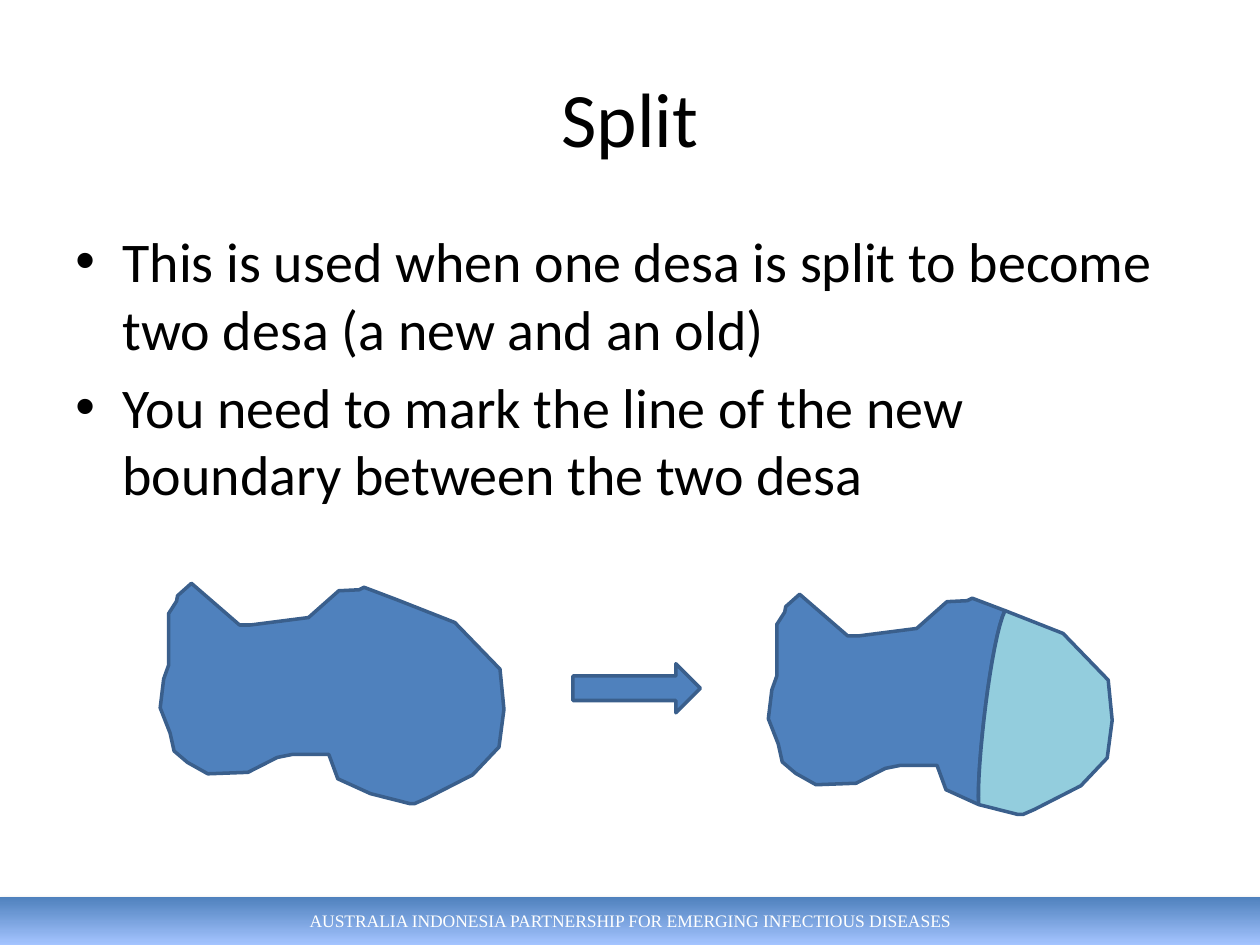
from lxml import etree
from pptx import Presentation
from pptx import util as u
from pptx.dml.color import RGBColor
from pptx.enum import shapes, text
from pptx.oxml import parse_xml
from pptx.oxml.ns import qn

BLACK = RGBColor(0x00, 0x00, 0x00)
WHITE = RGBColor(0xFF, 0xFF, 0xFF)
BLUE = RGBColor(0x4F, 0x81, 0xBD)
PALE_BLUE = RGBColor(0xA4, 0xC4, 0xFF)
OUTLINE = RGBColor(0x3A, 0x5F, 0x8C)
AQUA = RGBColor(0x93, 0xCD, 0xDD)

WEST = [
    (7.47, 16), (6.81, 15.7), (6.63, 15.21), (5.89, 15.21), (5.59, 15.27),
    (5, 15.57), (4.19, 15.6), (3.78, 15.37), (3.51, 15.14), (3.43, 14.78),
    (3.23, 14.27), (3.3, 13.69), (3.4, 13.41), (3.4, 12.37), (3.56, 12.12),
    (3.58, 12.01), (3.86, 11.76), (4.83, 12.6), (5.05, 12.6), (6.22, 12.45),
    (6.83, 11.91), (7.24, 11.89), (7.34, 11.84), (8, 12.09),
]
EAST = [
    (9.17, 12.55), (10.08, 13.49), (10.16, 14.3), (10.06, 15.06),
    (9.53, 15.62), (8.59, 16.1), (8.36, 16.2), (8.26, 16.2),
]
BOUNDARY_CONTROLS = [(7.72, 12.65), (7.42, 15.29)]
AFTER_SPLIT = (12.26, 0.22)

SHADOW = (
    '<a:effectLst xmlns:a="http://schemas.openxmlformats.org/drawingml/2006/main">'
    '<a:outerShdw blurRad="40000" dist="23000" dir="5400000" rotWithShape="0">'
    '<a:srgbClr val="000000"><a:alpha val="35000"/></a:srgbClr>'
    '</a:outerShdw></a:effectLst>'
)


def add_bullet(paragraph, indent):
    properties = paragraph._p.get_or_add_pPr()
    properties.set("marL", str(indent))
    properties.set("indent", str(-indent))
    etree.SubElement(properties, qn("a:buFont")).set("typeface", "Arial")
    etree.SubElement(properties, qn("a:buChar")).set("char", "•")


def write(frame, *lines, size, color, font="Calibri", align=text.PP_ALIGN.LEFT,
          anchor=text.MSO_ANCHOR.TOP, bullet_indent=None, gap=0):
    frame.word_wrap = True
    frame.vertical_anchor = anchor
    for number, line in enumerate(lines):
        paragraph = frame.add_paragraph() if number else frame.paragraphs[0]
        if number:
            paragraph.space_before = u.Pt(gap)
        if bullet_indent:
            add_bullet(paragraph, bullet_indent)
        paragraph.alignment = align
        run = paragraph.add_run()
        run.text = line
        run.font.size = u.Pt(size)
        run.font.name = font
        run.font.color.rgb = color


def add_footer(slide):
    footer = slide.shapes.add_shape(
        shapes.MSO_SHAPE.RECTANGLE, u.Cm(0), u.Cm(18.08), u.Cm(25.4), u.Cm(0.97))
    footer.line.fill.background()
    footer.fill.gradient()
    footer.fill.gradient_angle = 270
    for stop, position, color in zip(footer.fill.gradient_stops, (0, 1), (BLUE, PALE_BLUE)):
        stop.position = position
        stop.color.rgb = color
    footer._element.spPr.append(parse_xml(SHADOW))
    write(footer.text_frame,
          "AUSTRALIA INDONESIA PARTNERSHIP FOR EMERGING INFECTIOUS DISEASES",
          size=10, color=WHITE, font="Times New Roman",
          align=text.PP_ALIGN.CENTER, anchor=text.MSO_ANCHOR.MIDDLE)


def add_textbox(slide, top, height, *lines, **format):
    box = slide.shapes.add_textbox(u.Cm(1.27), u.Cm(top), u.Cm(22.86), u.Cm(height))
    write(box.text_frame, *lines, **format)


def paint(shape, color):
    shape.shadow.inherit = False
    shape.fill.solid()
    shape.fill.fore_color.rgb = color
    shape.line.color.rgb = OUTLINE
    shape.line.width = u.Pt(2)


def curve(start, first, second, end, steps=16):
    points = []
    for step in range(1, steps):
        t = step / steps
        weights = ((1 - t) ** 3, 3 * t * (1 - t) ** 2, 3 * t ** 2 * (1 - t), t ** 3)
        points.append(tuple(
            sum(w * p[axis] for w, p in zip(weights, (start, first, second, end)))
            for axis in (0, 1)))
    return points


def add_desa(slide, outline, color, offset=(0, 0)):
    corners = [(u.Cm(x + offset[0]), u.Cm(y + offset[1])) for x, y in outline]
    builder = slide.shapes.build_freeform(*corners[0])
    builder.add_line_segments(corners[1:], close=True)
    paint(builder.convert_to_shape(), color)


def add_arrow(slide):
    arrow = slide.shapes.add_shape(
        shapes.MSO_SHAPE.RIGHT_ARROW, u.Cm(11.55), u.Cm(13.38), u.Cm(2.57), u.Cm(0.99))
    paint(arrow, BLUE)


def main():
    deck = Presentation()
    deck.slide_width, deck.slide_height = u.Cm(25.4), u.Cm(19.05)
    slide = deck.slides.add_slide(deck.slide_layouts[6])

    add_footer(slide)
    add_textbox(slide, 0.76, 3.18, "Split", size=44, color=BLACK,
                align=text.PP_ALIGN.CENTER, anchor=text.MSO_ANCHOR.MIDDLE)
    add_textbox(slide, 4.45, 12.57,
                "This is used when one desa is split to become two desa (a new and an old)",
                "You need to mark the line of the new boundary between the two desa",
                size=32, color=BLACK, bullet_indent=u.Cm(0.95), gap=6.4)

    north, south = WEST[-1], WEST[0]
    boundary = curve(north, *BOUNDARY_CONTROLS, south)
    add_desa(slide, WEST + EAST, BLUE)
    add_desa(slide, WEST + boundary, BLUE, AFTER_SPLIT)
    add_desa(slide, [north, *EAST, south, *reversed(boundary)], AQUA, AFTER_SPLIT)
    add_arrow(slide)

    deck.save("out.pptx")


if __name__ == "__main__":
    main()
